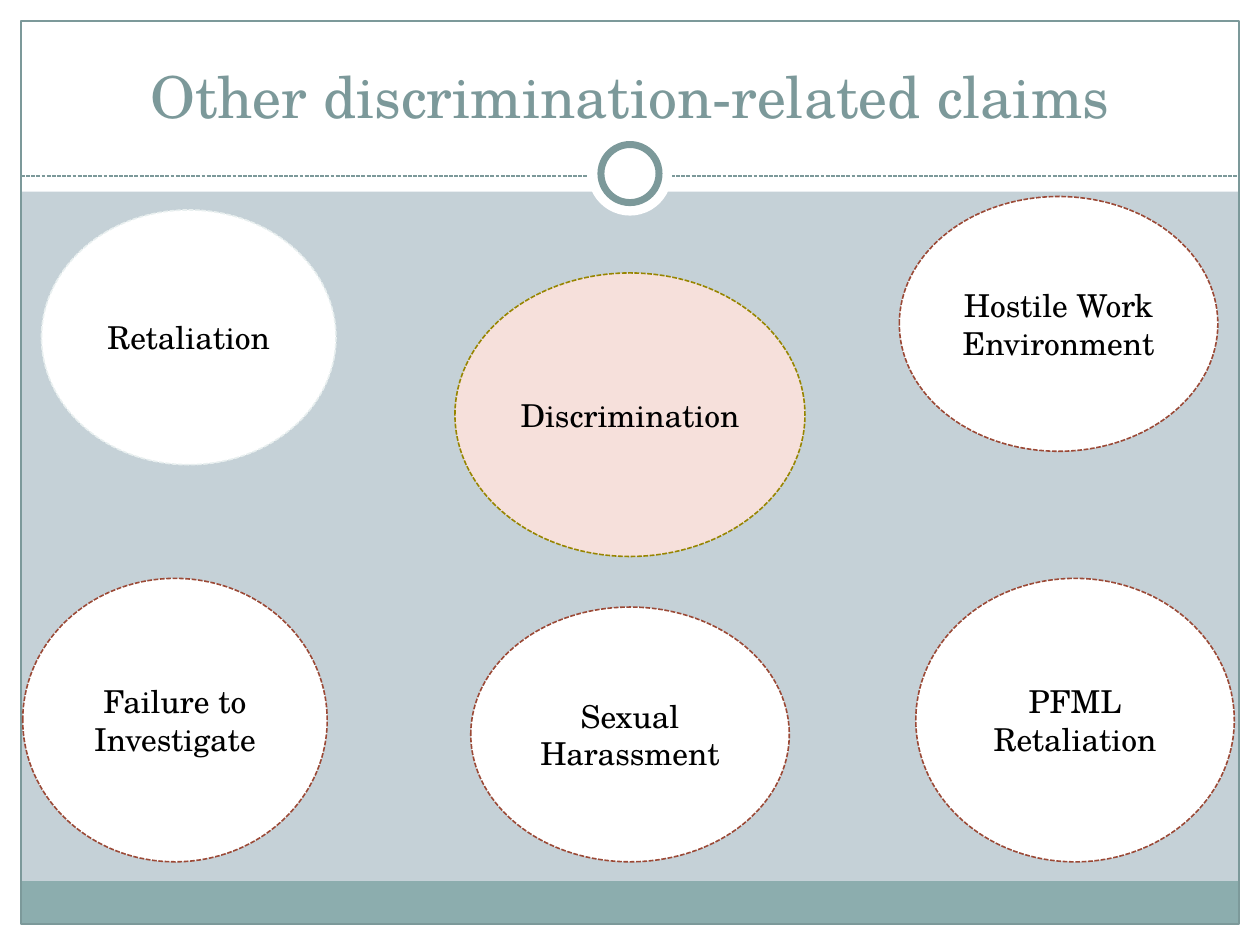
from lxml.etree import SubElement
from pptx import Presentation
from pptx.dml.color import RGBColor
from pptx.enum.dml import MSO_LINE
from pptx.enum.shapes import MSO_CONNECTOR, MSO_SHAPE
from pptx.enum.text import MSO_ANCHOR, PP_ALIGN
from pptx.oxml.ns import qn
from pptx.util import Pt

TITLE = "Other discrimination-related claims"
FONT = "TeX Gyre Schola"
COLORS = {
    "background": "C5D1D7", "white": "FFFFFF", "band": "8CADAE",
    "frame": "7C999A", "pink": "F6E0DB", "olive": "978500",
    "rust": "9B4936", "pale": "E8EFEF", "black": "000000",
}
# Claim, (left, top, width, height), fill, outline
CLAIMS = [
    ("Discrimination", (260, 156, 200, 162), "pink", "olive"),
    ("PFML Retaliation", (523.3, 330.5, 182, 162), "white", "rust"),
    ("Hostile Work Environment", (513.9, 112.3, 182, 145.6), "white", "rust"),
    ("Retaliation", (23.7, 120, 168.3, 145.6), "white", "pale"),
    ("Failure to Investigate", (13, 330.5, 174, 162), "white", "rust"),
    ("Sexual Harassment", (269, 346.9, 182, 145.6), "white", "rust"),
]

WIDTH, HEIGHT = 720, 540
MARGIN = 12
HEADER = 109.5
BAND = 24.5
RULE_Y = 100.6
RING_Y = 99.2


def color(name):
    return RGBColor.from_string(COLORS[name])


def add_figure(page, preset, bounds, fill=None, outline=None, weight=0.75):
    figure = page.shapes.add_shape(preset, *[Pt(value) for value in bounds])
    figure.shadow.inherit = False
    if fill:
        figure.fill.solid()
        figure.fill.fore_color.rgb = color(fill)
    else:
        figure.fill.background()
    if outline:
        figure.line.color.rgb = color(outline)
        figure.line.width = Pt(weight)
    else:
        figure.line.fill.background()
    return figure


def write(shape, text, size, ink, anchor):
    frame = shape.text_frame
    frame.text = text
    frame.word_wrap = True
    frame.vertical_anchor = anchor
    paragraph = frame.paragraphs[0]
    paragraph.alignment = PP_ALIGN.CENTER
    font = paragraph.runs[0].font
    font.name = FONT
    font.size = Pt(size)
    font.color.rgb = color(ink)


def add_frame(page):
    # White borders
    for bounds in [
        (0, HEIGHT - MARGIN, WIDTH, MARGIN),
        (0, 0, WIDTH, HEADER),
        (0, 0, MARGIN, HEIGHT),
        (WIDTH - MARGIN, 0, MARGIN, HEIGHT),
    ]:
        add_figure(page, MSO_SHAPE.RECTANGLE, bounds, "white")

    # Footer band and outer frame
    inner_width = WIDTH - 2 * MARGIN
    add_figure(page, MSO_SHAPE.RECTANGLE,
               (MARGIN, HEIGHT - MARGIN - BAND, inner_width, BAND), "band")
    add_figure(page, MSO_SHAPE.RECTANGLE,
               (MARGIN, MARGIN, inner_width, HEIGHT - 2 * MARGIN), outline="frame")

    # Dashed rule
    rule = page.shapes.add_connector(
        MSO_CONNECTOR.STRAIGHT, Pt(MARGIN), Pt(RULE_Y), Pt(WIDTH - MARGIN), Pt(RULE_Y))
    rule.line.color.rgb = color("frame")
    rule.line.width = Pt(0.75)
    rule.line.dash_style = MSO_LINE.SQUARE_DOT
    SubElement(rule._element.spPr, qn("a:effectLst"))

    # Ring on its white disc
    for diameter, outline in [(48, None), (33.2, "frame")]:
        add_figure(page, MSO_SHAPE.OVAL,
                   ((WIDTH - diameter) / 2, RING_Y - diameter / 2, diameter, diameter),
                   "white", outline, 4)


def add_title(page):
    title = page.shapes.title
    title.left, title.top, title.width, title.height = Pt(24), Pt(18), Pt(672), Pt(60)
    write(title, TITLE, 33, "frame", MSO_ANCHOR.BOTTOM)
    page.shapes._spTree.append(title._element)  # in front of the white header


def add_claims(page):
    for text, bounds, fill, outline in CLAIMS:
        oval = add_figure(page, MSO_SHAPE.OVAL, bounds, fill, outline, 0.9)
        oval.line.dash_style = MSO_LINE.SQUARE_DOT
        write(oval, text, 18, "black", MSO_ANCHOR.MIDDLE)


def main():
    deck = Presentation()
    deck.slide_width, deck.slide_height = Pt(WIDTH), Pt(HEIGHT)
    page = deck.slides.add_slide(deck.slide_layouts[5])
    page.background.fill.solid()
    page.background.fill.fore_color.rgb = color("background")
    add_frame(page)
    add_title(page)
    add_claims(page)
    deck.save("out.pptx")


if __name__ == "__main__":
    main()
